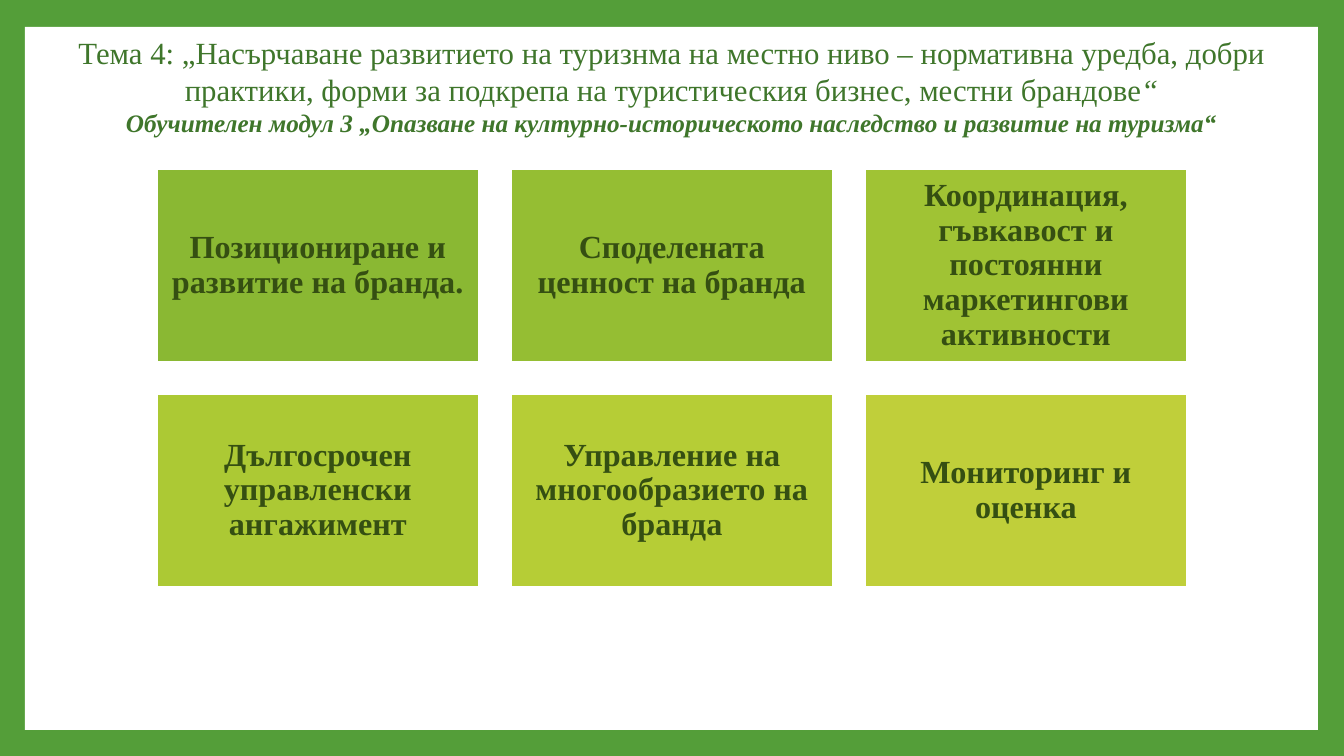
from pptx import Presentation
from pptx.dml.color import RGBColor
from pptx.enum.shapes import MSO_SHAPE as Shape
from pptx.enum.text import MSO_ANCHOR as Anchor, MSO_AUTO_SIZE as AutoSize, PP_ALIGN as Align
from pptx.util import Pt

PX = 914400 / 100.8
COLORS = {"frame": "549E39", "panel": "FFFFFF", "title": "3F762B", "card text": "354F12"}
CARDS = [
    ("Позициониране и развитие на бранда.", "8AB833"),
    ("Споделената ценност на бранда", "95BE33"),
    ("Координация, гъвкавост и постоянни маркетингови активности", "A0C334"),
    ("Дългосрочен управленски ангажимент", "ACC934"),
    ("Управление на многообразието на бранда", "B6CD36"),
    ("Мониторинг и оценка", "C0CF3A"),
]
COLUMNS = 3
CARD_LEFT, CARD_TOP, CARD_WIDTH, CARD_HEIGHT = 157, 169, 322, 193
COLUMN_STEP, ROW_STEP, CARD_INSET = 354, 225, 10


def add_text(paragraph, text, size, color, bold=False, italic=False):
    paragraph.alignment = Align.CENTER
    run = paragraph.add_run()
    run.text = text
    font = run.font
    font.name, font.size, font.bold, font.italic = "Times New Roman", Pt(size), bold, italic
    font.color.rgb = RGBColor.from_string(color)


def add_rectangle(left, top, width, height, fill):
    shape = slide.shapes.add_shape(Shape.RECTANGLE, *(round(n * PX) for n in (left, top, width, height)))
    shape.shadow.inherit = False
    shape.fill.solid()
    shape.fill.fore_color.rgb = RGBColor.from_string(fill)
    shape.line.fill.background()
    return shape


presentation = Presentation()
presentation.slide_width, presentation.slide_height = round(1344 * PX), round(756 * PX)
slide = presentation.slides.add_slide(presentation.slide_layouts[5])
slide.background.fill.solid()
slide.background.fill.fore_color.rgb = RGBColor.from_string(COLORS["frame"])

# The white panel lies behind the title
title = slide.shapes.title
panel = add_rectangle(25, 27, 1293, 703, COLORS["panel"])
title.element.addprevious(panel.element)

title.left, title.top, title.width, title.height = (round(n * PX) for n in (37, 26, 1269, 119))
title_frame = title.text_frame
title_frame.word_wrap = True
title_frame.auto_size = AutoSize.NONE
title_frame.vertical_anchor = Anchor.MIDDLE
heading = title_frame.paragraphs[0]
add_text(heading, "Тема 4: „Насърчаване развитието на туризнма на местно ниво – нормативна уредба, "
         "добри практики, форми за подкрепа на туристическия бизнес, местни брандове",
         22, COLORS["title"])
add_text(heading, "“", 22, COLORS["title"], italic=True)
heading.add_line_break()
add_text(heading, "Обучителен модул 3 „Опазване на културно-историческото наследство "
         "и развитие на туризма“", 18, COLORS["title"], bold=True, italic=True)

for index, (text, fill) in enumerate(CARDS):
    row, column = divmod(index, COLUMNS)
    card = add_rectangle(CARD_LEFT + column * COLUMN_STEP, CARD_TOP + row * ROW_STEP,
                         CARD_WIDTH, CARD_HEIGHT, fill)
    card.line.color.rgb = RGBColor.from_string(COLORS["panel"])
    card.line.width = Pt(1.5)
    frame = card.text_frame
    frame.word_wrap = True
    frame.vertical_anchor = Anchor.MIDDLE
    frame.margin_left = frame.margin_right = round(CARD_INSET * PX)
    frame.margin_top = frame.margin_bottom = round(CARD_INSET * PX)
    paragraph = frame.paragraphs[0]
    paragraph.line_spacing = 0.9
    add_text(paragraph, text, 23, COLORS["card text"], bold=True)

presentation.save("out.pptx")
